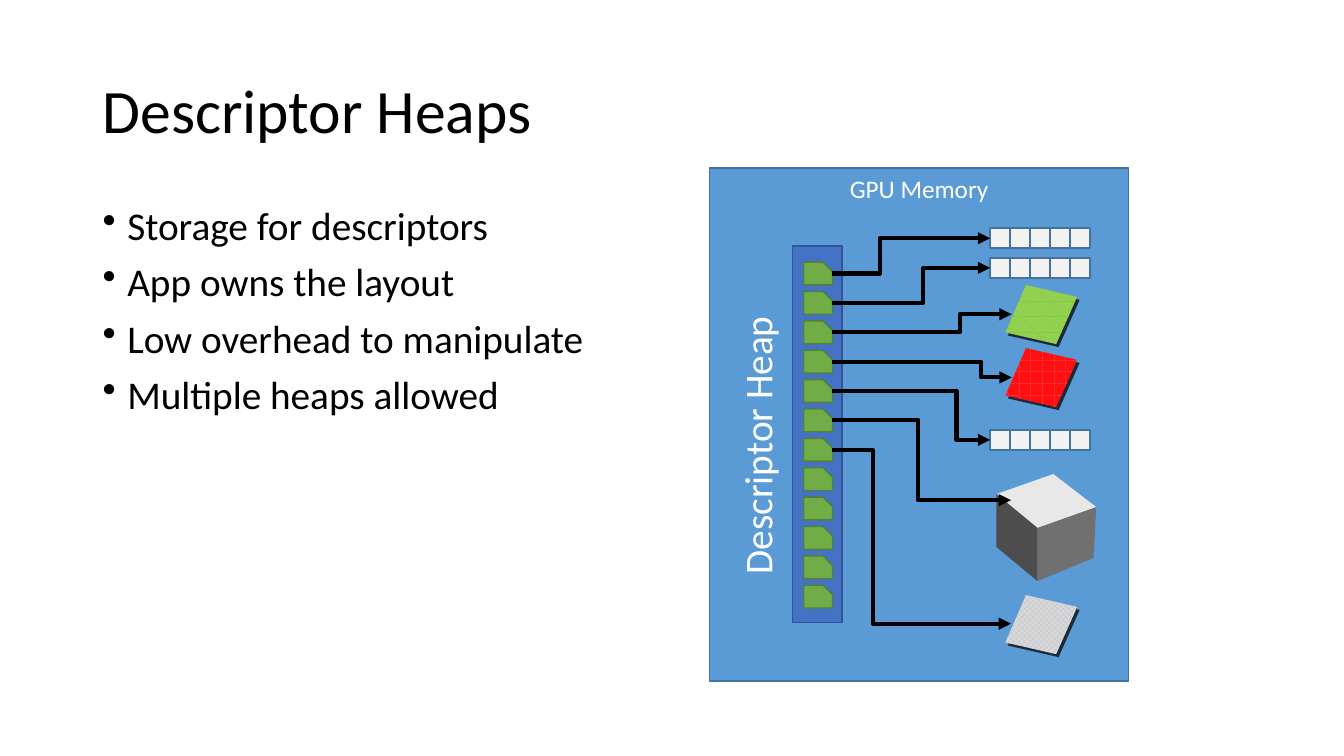
"""Build the slide on descriptor heaps in GPU memory."""
from dataclasses import dataclass

from lxml import etree
from pptx import Presentation
from pptx.dml.color import RGBColor
from pptx.enum.dml import MSO_PATTERN
from pptx.enum.shapes import MSO_CONNECTOR, MSO_SHAPE
from pptx.enum.text import MSO_ANCHOR, PP_ALIGN
from pptx.oxml.ns import qn
from pptx.util import Pt

RECT, SNIP = MSO_SHAPE.RECTANGLE, MSO_SHAPE.SNIP_1_RECTANGLE
ELBOW = MSO_CONNECTOR.ELBOW
TOP, MIDDLE = MSO_ANCHOR.TOP, MSO_ANCHOR.MIDDLE
LEFT, CENTER = PP_ALIGN.LEFT, PP_ALIGN.CENTER
DIVOT, BRICK = MSO_PATTERN.DIVOT, MSO_PATTERN.HORIZONTAL_BRICK
DIAMOND = MSO_PATTERN.OUTLINED_DIAMOND


@dataclass(frozen=True)
class Theme:
    """Colours and type sizes of the slide."""
    font: str = "Calibri"
    title: float = 44.9
    body: float = 28.6
    label: float = 18.4
    ink: str = "000000"
    white: str = "FFFFFF"
    panel: str = "5B9BD5"
    rim: str = "43739E"
    heap: str = "4472C4"
    heap_rim: str = "325491"
    slot: str = "70AD47"
    slot_rim: str = "538035"
    cell: str = "F2F2F2"
    edge: str = "1C2B3A"
    grass: tuple = (DIVOT, "86C84A", "92D050")
    brick: tuple = (BRICK, "FF2A2A", "FF0F0F")
    mesh: tuple = (DIAMOND, "B8BCC4", "D9D9D9")
    cube: tuple = ("E8E8E9", "4D4D4D", "707070")


class Canvas:
    """Draw styled elements on one slide."""

    def __init__(self, slide, theme):
        """Keep the slide and its theme."""
        self.shapes, self.theme = slide.shapes, theme

    def paint(self, shape, fill, rim=None, width=1):
        """Set fill, outline and shadow of a shape."""
        shape.shadow.inherit = False
        if isinstance(fill, tuple):
            shape.fill.patterned()
            shape.fill.pattern, fore, back = fill
            shape.fill.fore_color.rgb = RGBColor.from_string(fore)
            shape.fill.back_color.rgb = RGBColor.from_string(back)
        else:
            shape.fill.solid()
            shape.fill.fore_color.rgb = RGBColor.from_string(fill)
        if rim:
            shape.line.color.rgb = RGBColor.from_string(rim)
            shape.line.width = Pt(width)
        else:
            shape.line.fill.background()
        return shape

    def box(self, kind, area, fill, rim, width=1):
        """Add a preset shape."""
        shape = self.shapes.add_shape(kind, *map(Pt, area))
        return self.paint(shape, fill, rim, width)

    def face(self, left, top, points, fill):
        """Add a closed outline from points relative to a corner."""
        spots = [(Pt(left + x), Pt(top + y)) for x, y in points]
        form = self.shapes.build_freeform(*spots[0], scale=1.0)
        form.add_line_segments(spots[1:], close=True)
        return self.paint(form.convert_to_shape(), fill)

    def letter(self, shape, lines, size, color, align=LEFT, bullet=False, **frame):
        """Fill a shape with paragraphs."""
        text = shape.text_frame
        for name, value in {"word_wrap": True, "vertical_anchor": TOP, **frame}.items():
            setattr(text, name, value)
        text.text = "\n".join(lines)
        for para in text.paragraphs:
            para.alignment = align
            for name, value in {"name": self.theme.font, "size": Pt(size)}.items():
                setattr(para.font, name, value)
            para.font.color.rgb = RGBColor.from_string(color)
            if bullet:
                self.bullet(para)
        return shape

    def bullet(self, para):
        """Give a paragraph its bullet, hanging indent and spacing."""
        para.line_spacing, para.space_before = 0.9, Pt(10.2)
        props = para._p.get_or_add_pPr()
        for name, value in {"marL": Pt(18), "indent": -Pt(18)}.items():
            props.set(name, str(value))
        mark = etree.Element(qn("a:buChar"), char="•")
        props.insert_element_before(mark, "a:tabLst", "a:defRPr", "a:extLst")

    def text(self, area, lines, size, color, **look):
        """Add a text box."""
        shape = self.shapes.add_textbox(*map(Pt, area))
        return self.letter(shape, lines, size, color, **look)

    def arrow(self, start, end, bend):
        """Add an elbow arrow that turns at a share of its width."""
        link = self.shapes.add_connector(ELBOW, *map(Pt, start + end))
        link.line.color.rgb = RGBColor.from_string(self.theme.ink)
        link.line.width = Pt(3)
        props = link._element.spPr
        shape = props.find(qn("a:prstGeom"))
        guides = shape.find(qn("a:avLst"))
        if guides is None:
            guides = etree.SubElement(shape, qn("a:avLst"))
        etree.SubElement(guides, qn("a:gd"), name="adj1", fmla=f"val {round(bend * 100000)}")
        etree.SubElement(props.find(qn("a:ln")), qn("a:tailEnd"), type="triangle")
        etree.SubElement(props, qn("a:effectLst"))

    def buffer(self, left, top):
        """Add a row of five buffer cells."""
        side = 14.6
        for col in range(5):
            area = (left + col * side, top, side, side)
            self.box(RECT, area, self.theme.cell, self.theme.rim, 1.25)

    def tile(self, left, top, fill):
        """Add a tilted texture tile with a dark edge."""
        points = [(15, 0), (52.3, 8.6), (37, 43), (0, 34.5)]
        self.face(left + 1.8, top + 2.2, points, self.theme.edge)
        self.face(left, top, points, fill)

    def cube(self, left, top):
        """Add a cube from its three visible faces."""
        back, east, front, west = (41.4, 0), (72.7, 24.1), (29.9, 39.3), (0, 14.6)
        foot, heel, toe = (29.9, 78), (0, 53.2), (70.7, 61.2)
        sides = [(back, east, front, west), (west, front, foot, heel),
                 (front, east, toe, foot)]
        for points, fill in zip(sides, self.theme.cube):
            self.face(left, top, points, fill)


def main():
    """Build and save the slide."""
    deck = Presentation()
    deck.slide_width, deck.slide_height = Pt(979.2), Pt(550.8)
    look = Theme()
    art = Canvas(deck.slides.add_slide(deck.slide_layouts[6]), look)

    title = art.text((67.7, 29.5, 844.6, 106.6), ["Descriptor Heaps"], look.title,
                     look.ink, vertical_anchor=MIDDLE)
    title.text_frame.paragraphs[0].line_spacing = 0.9
    points = ["Storage for descriptors", "App owns the layout",
              "Low overhead to manipulate", "Multiple heaps allowed"]
    art.text((67.7, 146.9, 440, 349.2), points, look.body, look.ink, bullet=True)

    panel = art.box(RECT, (517, 122.4, 305.3, 373.7), look.panel, look.rim)
    art.letter(panel, ["GPU Memory"], look.label, look.white, align=CENTER)
    art.box(RECT, (577.4, 179.3, 36, 274.3), look.heap, look.heap_rim)

    row, step, wide, high = 191, 21.4, 20.9, 16.6
    slot = 585.6
    for index in range(12):
        area = (slot, row + index * step, wide, high)
        shape = art.box(SNIP, area, look.slot, look.slot_rim)
        shape.adjustments[0] = 0.416

    store = 721.4
    for top in (166.3, 187.9, 313.2):
        art.buffer(store, top)
    for top, fill in ((207.7, look.grass), (253.6, look.brick), (433.6, look.mesh)):
        art.tile(732.5, top, fill)
    art.cube(726, 345.4)

    targets = [(store, 173.6, 0.301), (store, 195.2, 0.577), (737.1, 229, 0.713),
               (737.1, 275, 0.83), (store, 320.5, 0.787), (736.6, 364.4, 0.481),
               (736.6, 454.4, 0.227)]
    for index, (left, top, bend) in enumerate(targets):
        start = (slot + wide, row + index * step + high / 2)
        art.arrow(start, (left, top), bend)

    label = art.text((447.8, 300.2, 208.1, 42.5), ["Descriptor Heap"], look.body,
                     look.white, word_wrap=False)
    label.rotation = 270
    deck.save("out.pptx")


if __name__ == "__main__":
    main()
